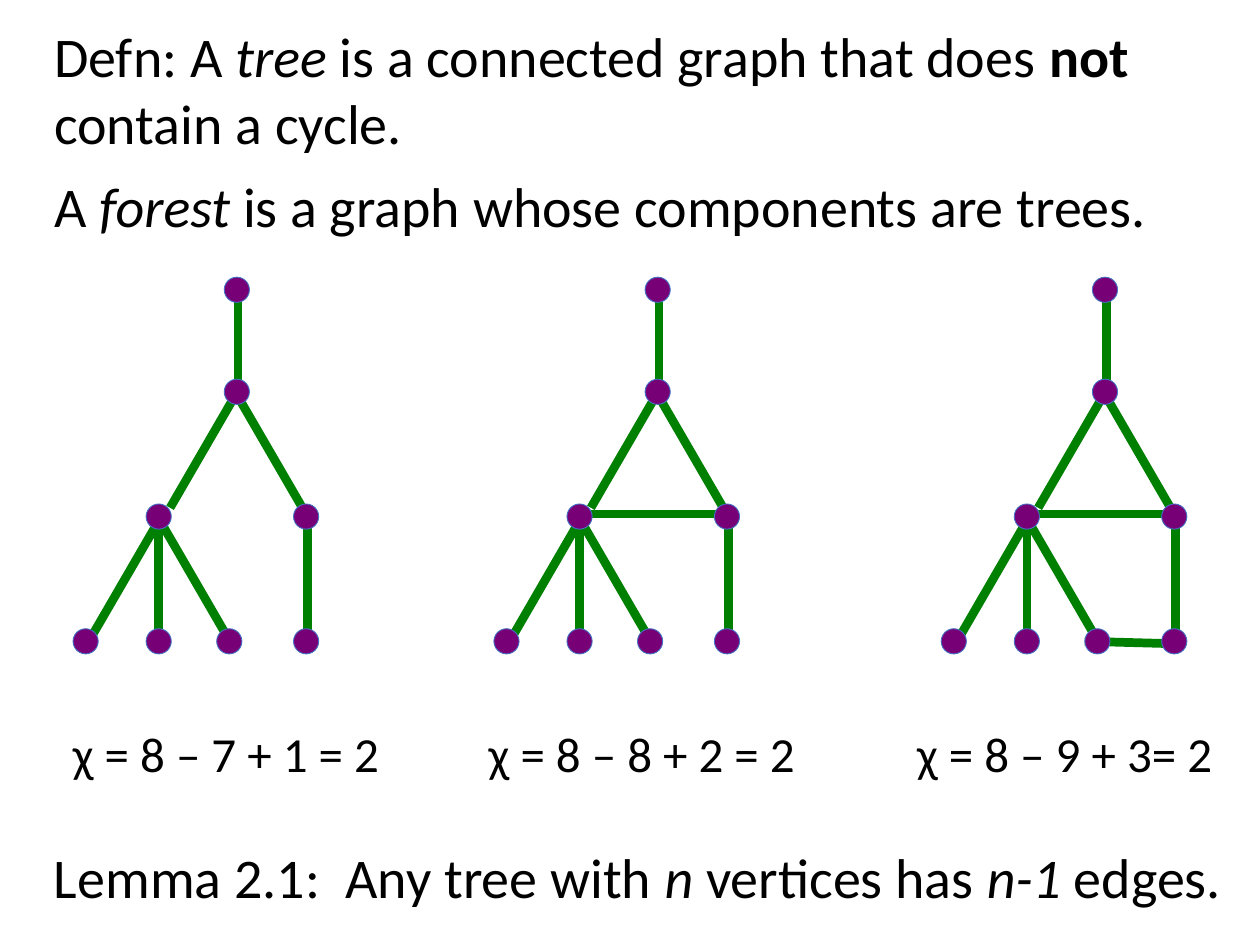
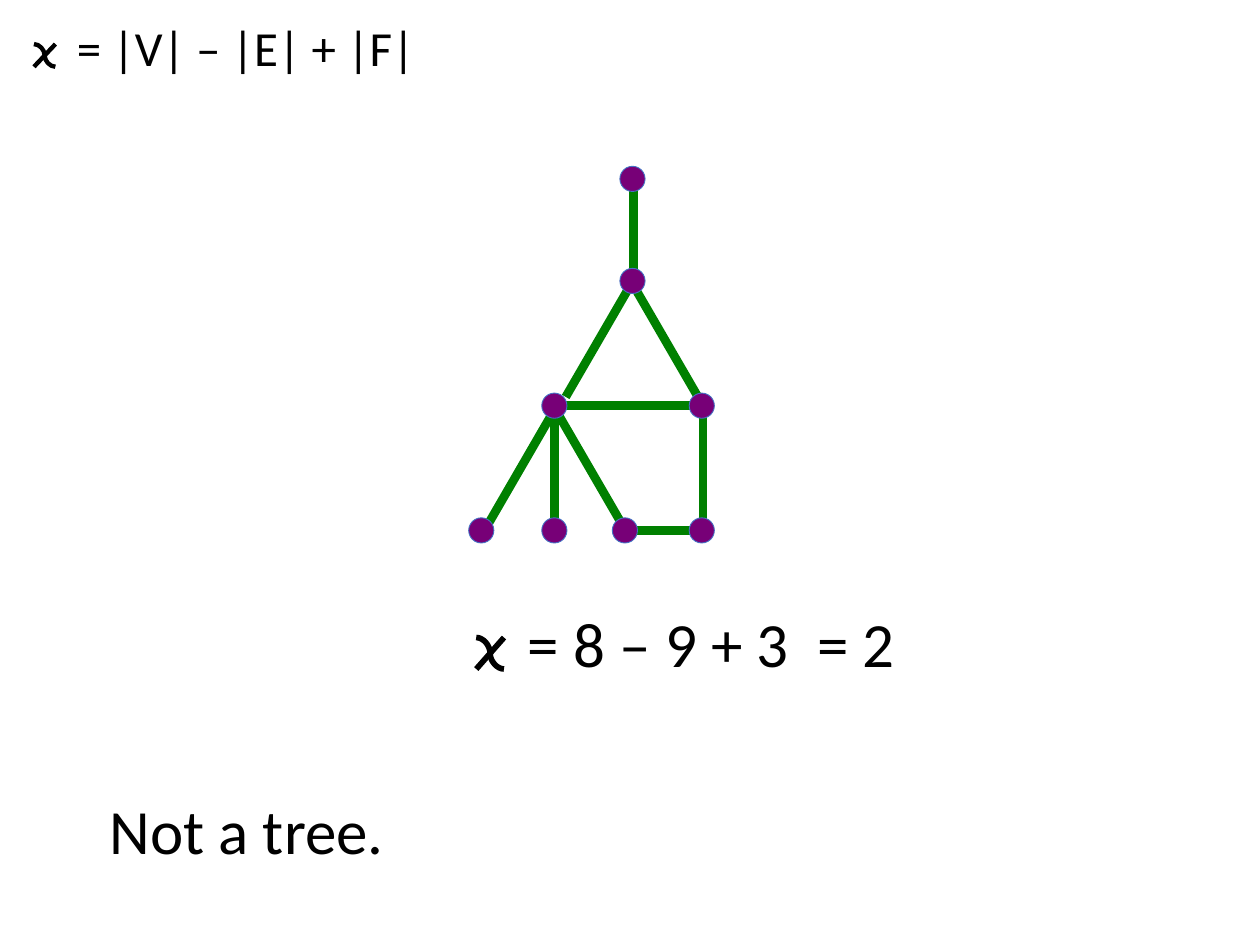
from lxml import etree
from pptx import Presentation
from pptx import util as u
from pptx.dml.color import RGBColor
from pptx.enum import shapes, text
from pptx.oxml.ns import qn

PX = 9144  # 100 px to the inch
FONT, INK = "Calibri", "000000"
GREEN, PURPLE, RIM = "008000", "770077", "4472C4"

# Graph geometry, measured from the centre of the root vertex
DOTS = [(0, 0), (0, 81), (-62, 180), (55, 180),
        (-120, 279), (-62, 279), (-6, 279), (55, 279)]
TREE = [(1, -6, 1, 75), (-2, 85, -53, 173), (1, 85, 52, 173),
        (-63, 185, -114, 273), (-62, 186, -62, 271),
        (-60, 185, -9, 273), (56, 181, 56, 273)]
CROSS = (-56, 178, 46, 178)
BASE = (-16, 279, 58, 281)


def px(*vals):
    return [u.Emu(val * PX) for val in vals]


def rgb(code):
    return RGBColor.from_string(code)


def fill_text(shape, paras, size, indent=0, wrap=True):
    """Each paragraph is a list of (words, style); style is "", "b" or "i"."""
    frame = shape.text_frame
    frame.word_wrap = wrap
    frame.auto_size = text.MSO_AUTO_SIZE.NONE
    frame.vertical_anchor = text.MSO_ANCHOR.TOP
    frame.margin_left, frame.margin_right = px(10 + indent, 10)
    frame.margin_top, frame.margin_bottom = px(5, 5)
    for num, parts in enumerate(paras):
        para = frame.add_paragraph() if num else frame.paragraphs[0]
        para.alignment = text.PP_ALIGN.LEFT
        para.space_before = u.Pt(9 if num else 0)
        for words, style in parts:
            run = para.add_run()
            run.text = words
            font = run.font
            font.name, font.size = FONT, u.Pt(size)
            font.color.rgb = rgb(INK)
            font.bold, font.italic = style == "b", style == "i"


def add_text(slide, box, paras, size, **opts):
    fill_text(slide.shapes.add_textbox(*px(*box)), paras, size, **opts)


def set_title(slide, box, paras, size, **opts):
    title = slide.shapes.title
    title.left, title.top, title.width, title.height = px(*box)
    fill_text(title, paras, size, **opts)


def add_line(group, ends, color, width, kind=shapes.MSO_CONNECTOR.STRAIGHT):
    line = group.shapes.add_connector(kind, *px(*ends))
    line.line.color.rgb = rgb(color)
    line.line.width = u.Pt(width)
    etree.SubElement(line._element.spPr, qn("a:effectLst"))


def add_dot(group, x, y):
    dot = group.shapes.add_shape(shapes.MSO_SHAPE.OVAL,
                                 *px(x - 10, y - 10, 20, 20))
    dot.shadow.inherit = False
    dot.fill.solid()
    dot.fill.fore_color.rgb = rgb(PURPLE)
    dot.line.color.rgb = rgb(RIM)
    dot.line.width = u.Pt(0.5)


def add_graph(slide, x, y, extra=()):
    """Draw the tree with its root at (x, y), plus any extra edges."""
    group = slide.shapes.add_group_shape()
    for x1, y1, x2, y2 in [*extra, *TREE]:
        add_line(group, (x + x1, y + y1, x + x2, y + y2), GREEN, 5)
    for dx, dy in DOTS:
        add_dot(group, x + dx, y + dy)


def add_chi(slide, x, y, wide, high, width):
    """Draw the letter chi as a curve crossed by a straight stroke."""
    group = slide.shapes.add_group_shape()
    add_line(group, (x + wide, y + high, x, y), INK, width,
             shapes.MSO_CONNECTOR.CURVE)
    add_line(group, (x, y + high, x + wide, y), INK, width)


def trees(slide):
    # Definitions
    set_title(slide, (33, 12, 950, 195), [
        [("Defn: A ", ""), ("tree", "i"),
         (" is a connected graph that does ", ""), ("not", "b"),
         (" contain a cycle.", "")],
        [("A ", ""), ("forest", "i"),
         (" is a graph whose components are trees.", "")]], 32)
    # Three graphs, each with its Euler characteristic
    for root, left, extra, sums in [
            (188, 48, [], "χ = 8 – 7 + 1 = 2"),
            (522, 378, [CROSS], "χ = 8 – 8 + 2 = 2"),
            (877, 718, [CROSS, BASE], "χ = 8 – 9 + 3= 2")]:
        add_graph(slide, root, 230, extra)
        add_text(slide, (left, 569, 270, 57), [[(sums, "")]], 28, wrap=False)
    # Lemma
    add_text(slide, (33, 664, 960, 64), [
        [("Lemma 2.1:  Any tree with ", ""), ("n", "i"),
         (" vertices has ", ""), ("n-1", "i"), (" edges.", "")]], 32)


def cycles(slide):
    # Formula
    set_title(slide, (33, 9, 309, 57), [[("= |V| – |E| + |F|", "")]], 28,
              indent=18, wrap=False)
    add_chi(slide, 27, 35, 17, 18, 2.5)
    # Graph with cycles and its sum
    add_graph(slide, 502, 142, [(-57, 180, 50, 180), (-2, 279, 55, 279)])
    add_text(slide, (375, 475, 346, 71), [[("= 8 – 9 + 3  = 2", "")]], 36,
             indent=34, wrap=False)
    add_chi(slide, 378, 506, 22, 25, 3.25)
    # Verdict
    add_text(slide, (77, 623, 309, 71), [[("Not a tree.", "")]], 36)


def main():
    deck = Presentation()
    deck.slide_width, deck.slide_height = px(1000, 750)
    for build in (trees, cycles):
        build(deck.slides.add_slide(deck.slide_layouts[5]))
    deck.save("out.pptx")


if __name__ == "__main__":
    main()
